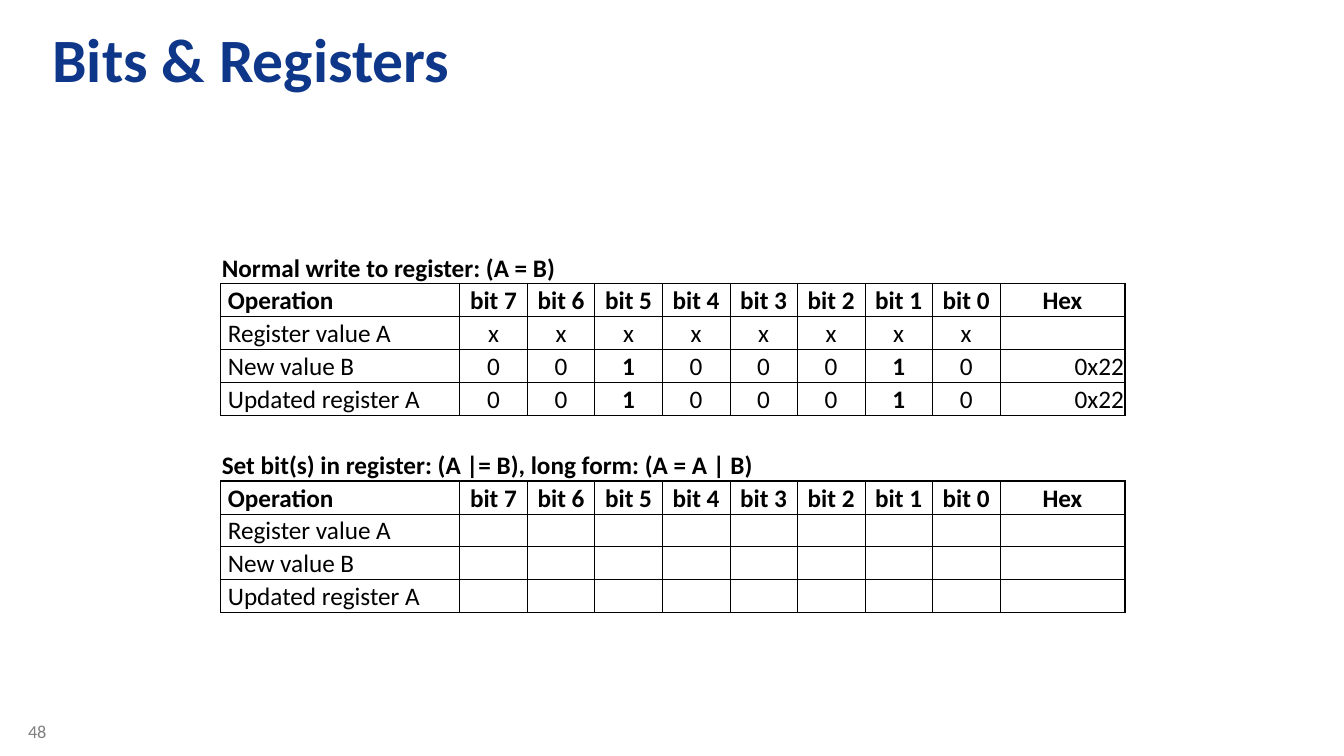
from dataclasses import dataclass

from lxml.etree import SubElement
from pptx import Presentation
from pptx.dml.color import RGBColor
from pptx.enum.text import MSO_ANCHOR as Anchor, PP_ALIGN as Align
from pptx.oxml.ns import qn
from pptx.table import Table, _Cell as Cell
from pptx.text.text import _Paragraph as Paragraph
from pptx.util import Inches, Pt

BLACK = "000000"
COL_WIDTHS = [2.37] + [0.67] * 8 + [1.24]
COLS = len(COL_WIDTHS)
LAST = COLS - 1
HEADER = ["Operation"] + [f"bit {bit}" for bit in range(7, -1, -1)] + ["Hex"]
LABELS = ["Register value A", "New value B", "Updated register A"]
THIN, THICK = 0.5, 1


@dataclass
class RegisterBlock:
    caption: str
    bits: list[str]
    hexes: list[str]

    def rows(self) -> list[list[str]]:
        return [HEADER] + [
            [label, *(bits or [""] * 8), hex_value]
            for label, bits, hex_value in zip(LABELS, self.bits, self.hexes)
        ]


BLOCKS = [
    RegisterBlock("Normal write to register: (A = B)",
                  ["xxxxxxxx", "00100010", "00100010"], ["", "0x22", "0x22"]),
    RegisterBlock("Set bit(s) in register: (A |= B), long form: (A = A | B)",
                  ["", "", ""], ["", "", ""]),
]
BLOCK_ROWS = 2 + len(LABELS)
STEP = BLOCK_ROWS + 1
ROWS = STEP * len(BLOCKS) - 1


def write(p: Paragraph, text: str, size: float, color: str = BLACK,
          bold: bool = False, align: Align = Align.LEFT) -> None:
    p.text = text
    p.alignment = align
    for r in p.runs:
        r.font.name = "Calibri"
        r.font.size = Pt(size)
        r.font.bold = bold
        r.font.color.rgb = RGBColor.from_string(color)


def set_borders(cell: Cell, left: float = 0, right: float = 0,
                top: float = 0, bottom: float = 0) -> None:
    """Border widths in points; zero means no line."""
    tc_pr = cell._tc.get_or_add_tcPr()
    sides = {"L": left, "R": right, "T": top, "B": bottom}
    for i, (side, width) in enumerate(sides.items()):
        ln = SubElement(tc_pr, qn(f"a:ln{side}"), w=str(Pt(width)))
        tc_pr.insert(i, ln)
        if width:
            fill = SubElement(ln, qn("a:solidFill"))
            SubElement(fill, qn("a:srgbClr"), val=BLACK)
        else:
            SubElement(ln, qn("a:noFill"))


def clear_cell(cell: Cell) -> None:
    cell.fill.background()
    cell.vertical_anchor = Anchor.BOTTOM
    cell.margin_left = cell.margin_right = cell.margin_top = Inches(0.01)
    cell.margin_bottom = 0


def fill_block(table: Table, first: int, block: RegisterBlock) -> None:
    for c in range(COLS):
        set_borders(table.cell(first, c), bottom=THICK)
    caption = table.cell(first, 0)
    caption.merge(table.cell(first, LAST))
    write(caption.text_frame.paragraphs[0], block.caption, 18, bold=True)

    rows = block.rows()
    for r, values in enumerate(rows):
        for c, value in enumerate(values):
            cell = table.cell(first + 1 + r, c)
            set_borders(cell,
                        left=THICK if c == 0 else THIN,
                        right=THICK if c == LAST else THIN,
                        top=THICK if r == 0 else THIN,
                        bottom=THICK if r == len(rows) - 1 else THIN)
            align = Align.CENTER
            if c == 0:
                align = Align.LEFT
                cell.margin_left = Inches(0.07)
            elif c == LAST and r > 0:
                align = Align.RIGHT
            write(cell.text_frame.paragraphs[0], value, 18,
                  bold=r == 0 or value == "1", align=align)


def main() -> None:
    prs = Presentation()
    prs.slide_width, prs.slide_height = Inches(13.33), Inches(7.5)
    s = prs.slides.add_slide(prs.slide_layouts[5])

    title = s.shapes.title
    title.left, title.top = Inches(0.39), Inches(0.11)
    title.width, title.height = Inches(12.47), Inches(1.03)
    tf = title.text_frame
    tf.margin_left = tf.margin_right = Inches(0.13)
    tf.margin_top = tf.margin_bottom = Inches(0.07)
    tf.vertical_anchor = Anchor.MIDDLE
    write(tf.paragraphs[0], "Bits & Registers", 44, "0E3689", bold=True)
    tf.paragraphs[0].line_spacing = 0.9

    number = s.shapes.add_textbox(Inches(0.18), Inches(7.1), Inches(0.59), Inches(0.4))
    number.text_frame.word_wrap = True
    write(number.text_frame.paragraphs[0], "48", 13, "808080")

    table = s.shapes.add_table(ROWS, COLS, Inches(2.19), Inches(2.49),
                               Inches(8.94), Inches(3.59)).table
    table.first_row = table.horz_banding = False
    for column, width in zip(table.columns, COL_WIDTHS):
        column.width = Inches(width)
    for cell in table.iter_cells():
        clear_cell(cell)
    for i, block in enumerate(BLOCKS):
        fill_block(table, i * STEP, block)
    for c in range(COLS):
        set_borders(table.cell(BLOCK_ROWS, c), top=THICK)

    prs.save("out.pptx")


if __name__ == "__main__":
    main()
